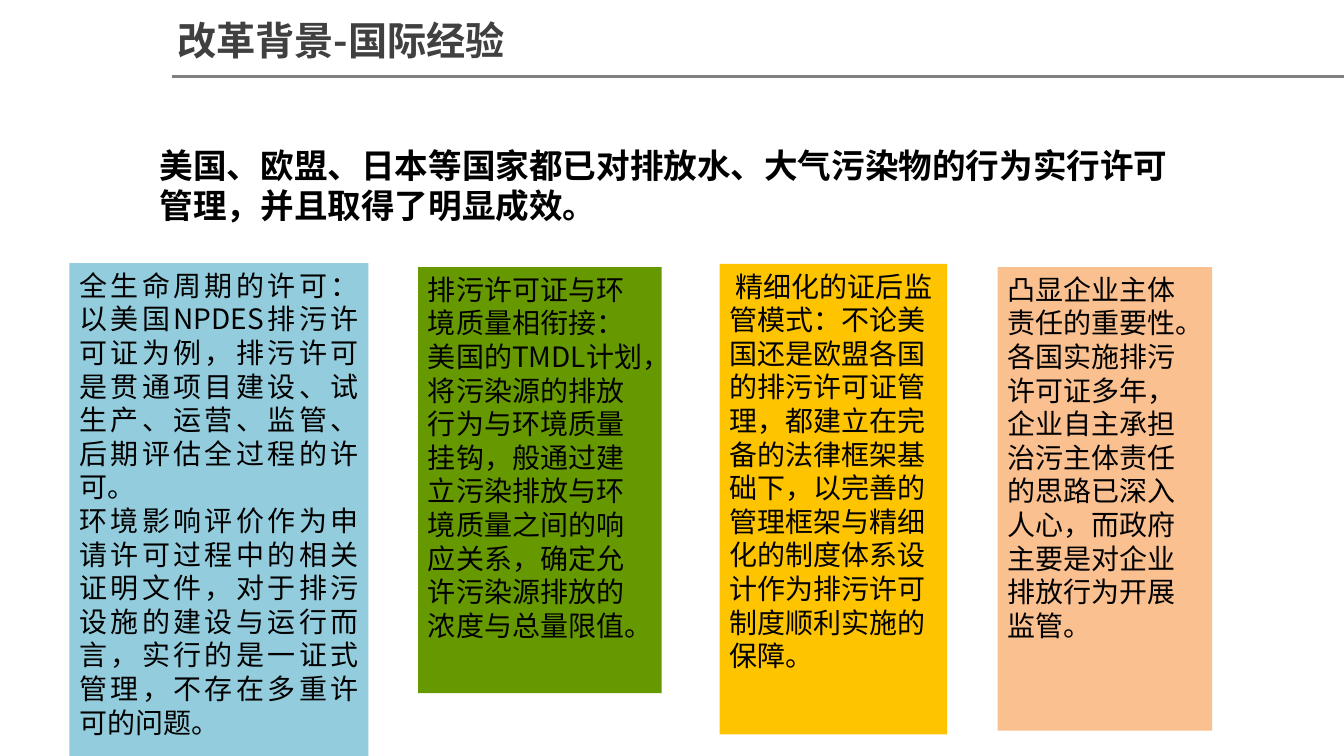
from pptx import Presentation
from pptx import util as u
from pptx.dml.color import RGBColor
from pptx.enum import shapes, text
from pptx.oxml.ns import qn
from lxml import etree

FONT = "Noto Sans CJK SC"
COLORS = {
    "title": "404040", "body": "000000", "rule": "808080",
    "lifecycle": "93CDDD", "quality": "669900",
    "supervision": "FFC400", "responsibility": "FAC090",
}
SLIDE_SIZE = (33.88, 19.05)
RULE = {"left": 4.34, "top": 1.93, "points": 2}

HEADINGS = [
    {"text": "改革背景-国际经验", "at": (4.22, 0.28, 11.28, 1.45),
     "size": 28, "color": "title"},
    {"text": "美国、欧盟、日本等国家都已对排放水、大气污染物的行为实行许可管理，并且取得了明显成效。",
     "at": (3.78, 3.51, 26.01, 2.31), "size": 24, "color": "body"},
]
CARDS = [
    {"fill": "lifecycle", "at": (1.75, 6.63, 7.54, 12.55), "align": "JUSTIFY", "indent": 0,
     "texts": [
         "全生命周期的许可：以美国NPDES排污许可证为例，排污许可是贯通项目建设、试生产、运营、监管、后期评估全过程的许可。",
         "环境影响评价作为申请许可过程中的相关证明文件，对于排污设施的建设与运行而言，实行的是一证式管理，不存在多重许可的问题。",
     ]},
    {"fill": "quality", "at": (10.54, 6.73, 6.14, 10.74), "align": "LEFT", "indent": 0,
     "texts": ["排污许可证与环境质量相衔接：美国的TMDL计划，将污染源的排放行为与环境质量挂钩，般通过建立污染排放与环境质量之间的响应关系，确定允许污染源排放的浓度与总量限值。"]},
    {"fill": "supervision", "at": (18.14, 6.65, 5.74, 11.86), "align": "LEFT", "indent": 0.16,
     "texts": ["精细化的证后监管模式：不论美国还是欧盟各国的排污许可证管理，都建立在完备的法律框架基础下，以完善的管理框架与精细化的制度体系设计作为排污许可制度顺利实施的保障。"]},
    {"fill": "responsibility", "at": (25.15, 6.73, 5.41, 11.68), "align": "LEFT", "indent": 0,
     "texts": ["凸显企业主体责任的重要性。各国实施排污许可证多年，企业自主承担治污主体责任的思路已深入人心，而政府主要是对企业排放行为开展监管。"]},
]


def rgb(name):
    return RGBColor.from_string(COLORS[name])


def apply(target, values):
    for name, value in values.items():
        setattr(target, name, value)


def write(box, texts, size, color, bold=False, align="LEFT", indent=0):
    frame = box.text_frame
    apply(frame, {
        "word_wrap": True, "vertical_anchor": text.MSO_ANCHOR.TOP,
        "margin_left": u.Cm(0.25), "margin_right": u.Cm(0.25),
        "margin_top": u.Cm(0.13), "margin_bottom": u.Cm(0.13),
    })
    for index, words in enumerate(texts):
        para = frame.add_paragraph() if index else frame.paragraphs[0]
        para.alignment = text.PP_ALIGN[align]
        if indent:
            properties = para._p.get_or_add_pPr()
            properties.set("marL", "0")
            properties.set("indent", str(int(u.Cm(indent))))
        span = para.add_run()
        span.text = words
        apply(span.font, {"name": FONT, "size": u.Pt(size), "bold": bold})
        span.font.color.rgb = rgb(color)
        east_asian = etree.SubElement(span._r.get_or_add_rPr(), qn("a:ea"))
        east_asian.set("typeface", FONT)


def add_rule(page):
    top = u.Cm(RULE["top"])
    rule = page.shapes.add_connector(
        shapes.MSO_CONNECTOR.STRAIGHT, u.Cm(RULE["left"]), top, u.Cm(SLIDE_SIZE[0]), top)
    rule.line.color.rgb = rgb("rule")
    rule.line.width = u.Pt(RULE["points"])
    etree.SubElement(rule._element.spPr, qn("a:effectLst"))


def add_card(page, card):
    box = page.shapes.add_shape(shapes.MSO_SHAPE.RECTANGLE, *map(u.Cm, card["at"]))
    box.shadow.inherit = False
    box.fill.solid()
    box.fill.fore_color.rgb = rgb(card["fill"])
    box.line.fill.background()
    write(box, card["texts"], 20, "body", align=card["align"], indent=card["indent"])


def add_heading(page, heading):
    box = page.shapes.add_textbox(*map(u.Cm, heading["at"]))
    write(box, [heading["text"]], heading["size"], heading["color"], bold=True)


def main():
    deck = Presentation()
    deck.slide_width, deck.slide_height = map(u.Cm, SLIDE_SIZE)
    page = deck.slides.add_slide(deck.slide_layouts[6])
    add_rule(page)
    for card in CARDS:
        add_card(page, card)
    for heading in HEADINGS:
        add_heading(page, heading)
    deck.save("out.pptx")


if __name__ == "__main__":
    main()
